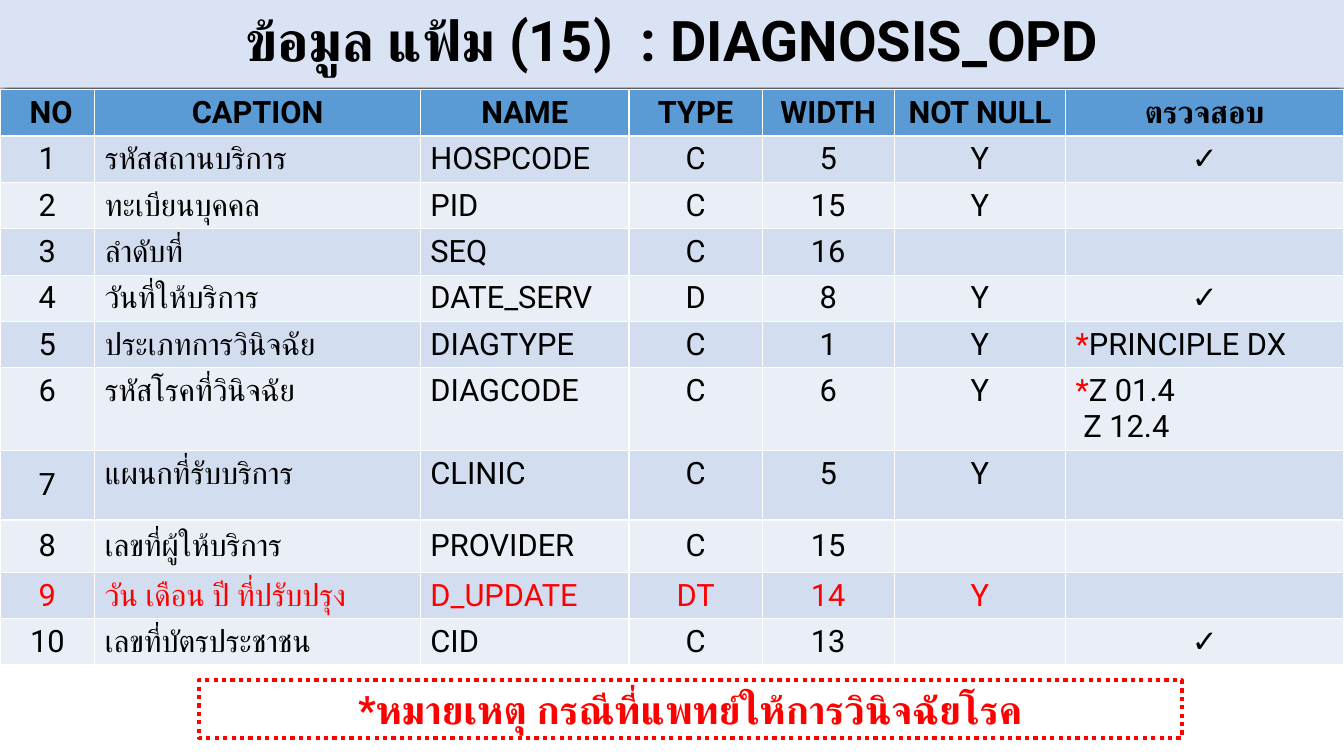
"""Build the DIAGNOSIS_OPD data file slide."""
from lxml import etree
from pptx import Presentation
from pptx.dml.color import RGBColor
from pptx.enum import dml, text
from pptx.oxml import ns
from pptx.util import Inches, Pt

FONT = "Roboto"
BLACK = RGBColor(0x00, 0x00, 0x00)
RED = RGBColor(0xFF, 0x00, 0x00)
TITLE_FILL = RGBColor(0xDA, 0xE3, 0xF3)
HEADER_FILL = RGBColor(0x5B, 0x9B, 0xD5)
BAND_FILLS = [RGBColor(0xEA, 0xEF, 0xF7), RGBColor(0xD2, 0xDE, 0xEF)]
CENTER = text.PP_ALIGN.CENTER
LEFT = text.PP_ALIGN.LEFT
MIDDLE = text.MSO_ANCHOR.MIDDLE
TOP = text.MSO_ANCHOR.TOP


def add_run(paragraph, words, size, color, bold=False):
    run = paragraph.add_run()
    run.text = words
    font_format = {"name": FONT, "size": Pt(size), "bold": bold}
    for attribute, value in font_format.items():
        setattr(run.font, attribute, value)
    run.font.color.rgb = color
    complex_font = etree.SubElement(run.font._element, ns.qn("a:cs"))
    complex_font.set("typeface", FONT)


presentation = Presentation()
presentation.slide_width = Inches(13.33)
presentation.slide_height = Inches(7.5)
slide = presentation.slides.add_slide(presentation.slide_layouts[5])

title = slide.shapes.title
title_box = {"left": 0, "top": 0, "width": 13.33, "height": 0.87}
for attribute, value in title_box.items():
    setattr(title, attribute, Inches(value))
title.fill.solid()
title.fill.fore_color.rgb = TITLE_FILL
title.text_frame.vertical_anchor = MIDDLE
title.text_frame.auto_size = text.MSO_AUTO_SIZE.NONE
paragraph = title.text_frame.paragraphs[0]
paragraph.alignment = CENTER
paragraph.line_spacing = 0.9
add_run(paragraph, "ข้อมูล แฟ้ม (15)  : DIAGNOSIS_OPD", 40, BLACK, True)

effects = etree.SubElement(title._element.spPr, ns.qn("a:effectLst"))
shadow = etree.SubElement(effects, ns.qn("a:outerShdw"))
shadow_format = {"blurRad": Pt(8.5), "dist": Pt(1), "dir": 90 * 60000}
for attribute, value in shadow_format.items():
    shadow.set(attribute, str(int(value)))
etree.SubElement(shadow, ns.qn("a:srgbClr")).set("val", str(BLACK))

rows = [
    [" NO", "CAPTION", "NAME", "TYPE", "WIDTH", "NOT NULL", "ตรวจสอบ"],
    ["1", "รหัสสถานบริการ", "HOSPCODE", "C", "5", "Y", "✓"],
    ["2", "ทะเบียนบุคคล", "PID", "C", "15", "Y", ""],
    ["3", "ลำดับที่", "SEQ", "C", "16", "", ""],
    ["4", "วันที่ให้บริการ", "DATE_SERV", "D", "8", "Y", "✓"],
    ["5", "ประเภทการวินิจฉัย", "DIAGTYPE", "C", "1", "Y", "*PRINCIPLE DX"],
    ["6", "รหัสโรคที่วินิจฉัย", "DIAGCODE", "C", "6", "Y", "*Z 01.4\n Z 12.4"],
    ["7", "แผนกที่รับบริการ", "CLINIC", "C", "5", "Y", ""],
    ["8", "เลขที่ผู้ให้บริการ", "PROVIDER", "C", "15", "", ""],
    ["9", "วัน เดือน ปี ที่ปรับปรุง", "D_UPDATE", "DT", "14", "Y", ""],
    ["10", "เลขที่บัตรประชาชน", "CID", "C", "13", "", "✓"],
]
column_widths = [0.94, 3.23, 2.07, 1.32, 1.31, 1.7, 2.76]
tall_rows = {6: 0.82, 7: 0.69, 8: 0.52}
middle_rows = {0, 8, 9}
middle_numbers = {5, 7, 10}
updated_row = 9

table = slide.shapes.add_table(
    len(rows), len(column_widths), 0, Inches(0.89), Inches(13.33), Inches(5.71)
).table
for column, width in zip(table.columns, column_widths):
    column.width = Inches(width)

for row_index, values in enumerate(rows):
    is_header = row_index == 0
    color = RED if row_index == updated_row else BLACK
    table.rows[row_index].height = Inches(tall_rows.get(row_index, 0.46))
    for column_index, value in enumerate(values):
        cell = table.cell(row_index, column_index)
        cell.fill.solid()
        cell.fill.fore_color.rgb = HEADER_FILL if is_header else BAND_FILLS[row_index % 2]
        is_middle = row_index in middle_rows or (
            column_index == 0 and row_index in middle_numbers
        )
        cell.vertical_anchor = MIDDLE if is_middle else TOP
        is_left = not is_header and (column_index in (1, 2) or value.startswith("*"))
        for line_index, line in enumerate(value.split("\n")):
            frame = cell.text_frame
            paragraph = frame.add_paragraph() if line_index else frame.paragraphs[0]
            paragraph.alignment = LEFT if is_left else CENTER
            if line.startswith("*"):
                add_run(paragraph, "*", 22, RED)
                line = line[1:]
            if line:
                add_run(paragraph, line, 22, color, is_header)

note = slide.shapes.add_textbox(Inches(1.97), Inches(6.75), Inches(9.75), Inches(0.57))
note.line.color.rgb = RED
note.line.width = Pt(3)
note.line.dash_style = dml.MSO_LINE.ROUND_DOT
note.text_frame.word_wrap = True
note.text_frame.auto_size = text.MSO_AUTO_SIZE.SHAPE_TO_FIT_TEXT
paragraph = note.text_frame.paragraphs[0]
paragraph.alignment = CENTER
add_run(paragraph, "*หมายเหตุ กรณีที่แพทย์ให้การวินิจฉัยโรค", 28, RED, True)

presentation.save("out.pptx")
